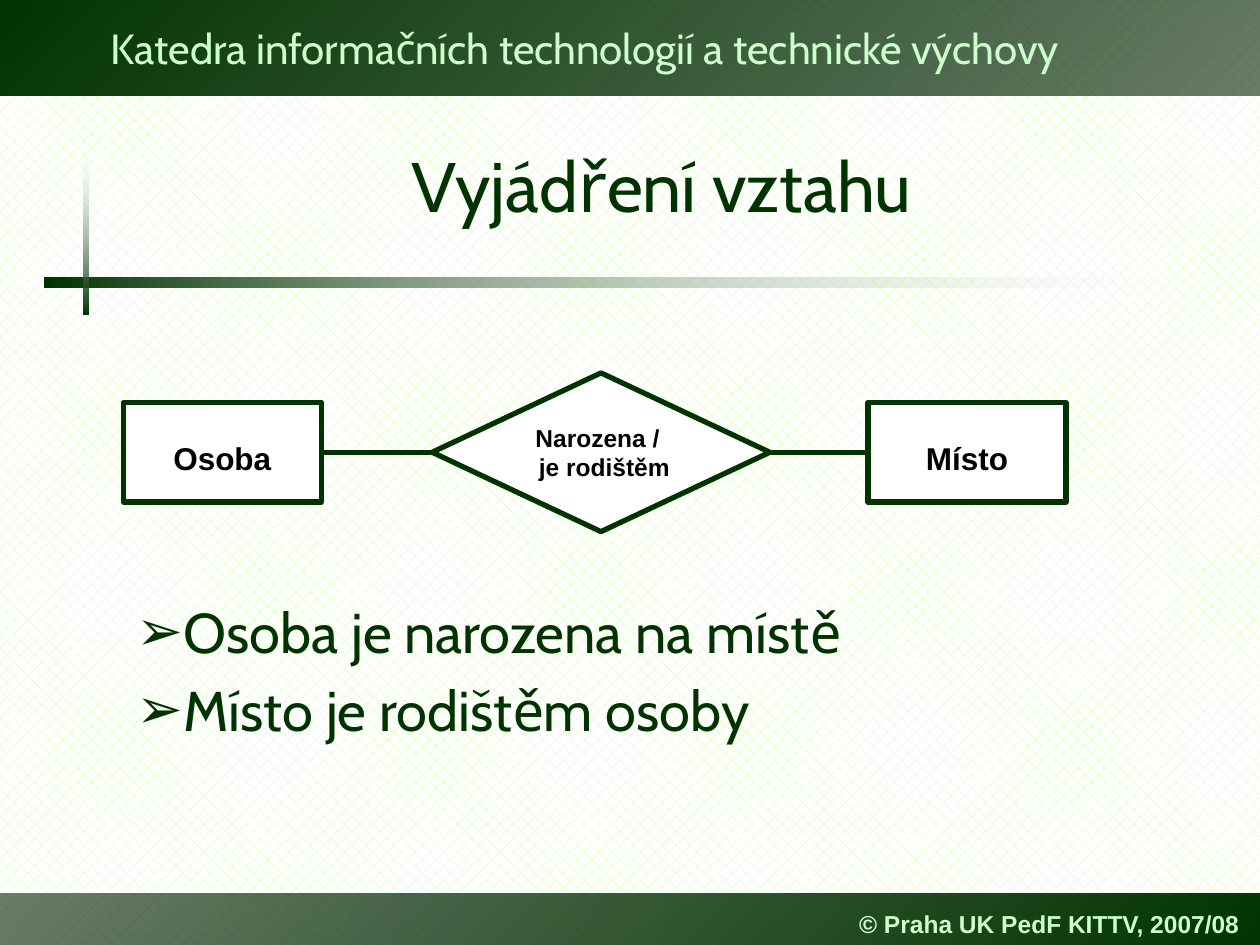
"""Build the slide on expressing a relationship between two entities."""
import pptx
import pptx.util
import pptx.dml.color
import pptx.enum.dml
import pptx.enum.shapes
import pptx.enum.text
import pptx.oxml
import pptx.oxml.ns
from lxml import etree

Inches, Pt = pptx.util.Inches, pptx.util.Pt
SHAPE = pptx.enum.shapes.MSO_SHAPE
ALIGN = pptx.enum.text.PP_ALIGN
ANCHOR = pptx.enum.text.MSO_ANCHOR
qn = pptx.oxml.ns.qn

COLORS = {"dark": "003300", "deep": "002400", "mint": "CCFFCC",
          "lime": "CCFF99", "white": "FFFFFF", "black": "000000"}
FONTS = {
    "header": {"name": "Cabin", "size": Pt(24), "color": "mint"},
    "footer": {"name": "Arial", "size": Pt(14), "bold": True, "color": "mint"},
    "title": {"name": "Cabin", "size": Pt(40), "color": "dark"},
    "body": {"name": "Cabin", "size": Pt(32), "color": "dark"},
    "entity": {"name": "Arial", "size": Pt(18), "bold": True, "color": "black"},
    "relation": {"name": "Arial", "size": Pt(14), "bold": True, "color": "black"},
}
BAND = [("deep", 59), ("dark", 100)]
FADE = [("dark", 100), ("white", 0)]
BARS = [
    ((0, 7.09, 10, 0.44), 0, BAND, 45),
    ((0, 0, 10, 0.76), 180, BAND, 45),
    ((0.35, 2.2, 9.49, 0.08), 0, FADE, 0),
    ((-0.03, 1.76, 1.43, 0.04), 270, FADE, 0),
]
LABELS = [
    ("Katedra informačních technologií a technické výchovy",
     (0.78, 0.13, 8.07, 0.5), "header", ANCHOR.TOP),
    ("© Praha UK PedF KITTV, 2007/08",
     (6.72, 7.17, 3.28, 0.33), "footer", ANCHOR.MIDDLE),
]
TITLE = "Vyjádření vztahu"
NODES = [
    ("Osoba", SHAPE.RECTANGLE, 0.98, 1.57, 0.79, "entity", 0.14),
    ("Narozena / \v je rodištěm", SHAPE.DIAMOND, 3.43, 2.68, 1.26, "relation", 0.05),
    ("Místo", SHAPE.RECTANGLE, 6.89, 1.57, 0.79, "entity", 0.14),
]
AXIS = 3.59
LEFT_SITE, RIGHT_SITE = 1, 3
BULLETS = ["Osoba je narozena na místě", "Místo je rodištěm osoby"]
INDENT = Inches(0.38)


def rgb(key):
    return pptx.dml.color.RGBColor.from_string(COLORS[key])


def style(font, key):
    for name, value in FONTS[key].items():
        if name == "color":
            font.color.rgb = rgb(value)
        else:
            setattr(font, name, value)


def place(shape, box):
    for name, value in zip(("left", "top", "width", "height"), box):
        setattr(shape, name, Inches(value))


def add_bar(s, box, rotation, stops, angle):
    bar = s.shapes.add_shape(SHAPE.RECTANGLE, *map(Inches, box))
    bar.rotation = rotation
    bar.shadow.inherit = False
    bar.line.fill.background()
    bar.fill.gradient()
    bar.fill.gradient_angle = -angle % 360
    for stop, (color, _) in zip(bar.fill.gradient_stops, stops):
        stop.color.rgb = rgb(color)
    for clr, (_, alpha) in zip(bar._element.spPr.iter(qn("a:srgbClr")), stops):
        etree.SubElement(clr, qn("a:alpha"), val=str(alpha * 1000))


def add_label(s, text, box, key, anchor):
    tf = s.shapes.add_textbox(*map(Inches, box)).text_frame
    tf.word_wrap = False
    tf.vertical_anchor = anchor
    r = tf.paragraphs[0].add_run()
    r.text = text
    style(r.font, key)
    return r


def add_text_shadow(r):
    effects = pptx.oxml.parse_xml(
        f'<a:effectLst {pptx.oxml.ns.nsdecls("a")}>'
        '<a:outerShdw dist="35921" dir="2700000">'
        '<a:srgbClr val="000000"/></a:outerShdw></a:effectLst>')
    r._r.rPr.find(qn("a:solidFill")).addnext(effects)


def add_node(s, text, kind, left, width, height, key, margin_top):
    box = (left, AXIS - height / 2, width, height)
    node = s.shapes.add_shape(kind, *map(Inches, box))
    node.shadow.inherit = False
    node.fill.solid()
    node.fill.fore_color.rgb = rgb("white")
    node.line.color.rgb = rgb("dark")
    node.line.width = Pt(3)
    tf = node.text_frame
    tf.margin_top = Inches(margin_top)
    tf.vertical_anchor = ANCHOR.MIDDLE
    p = tf.paragraphs[0]
    p.text = text
    p.alignment = ALIGN.CENTER
    for r in p.runs:
        style(r.font, key)
    return node


def add_link(s, start, end):
    link = s.shapes.add_connector(pptx.enum.shapes.MSO_CONNECTOR.STRAIGHT, 0, 0, 0, 0)
    link.begin_connect(start, RIGHT_SITE)
    link.end_connect(end, LEFT_SITE)
    link.line.color.rgb = rgb("dark")
    link.line.width = Pt(3)
    etree.SubElement(link._element.spPr, qn("a:effectLst"))


def fill_title(title):
    place(title, (0.75, 0.84, 9, 1.25))
    tf = title.text_frame
    tf.vertical_anchor = ANCHOR.MIDDLE
    p = tf.paragraphs[0]
    p.alignment = ALIGN.CENTER
    r = p.add_run()
    r.text = TITLE
    style(r.font, "title")


def fill_body(body):
    place(body, (0.98, 4.69, 6.54, 1.89))
    tf = body.text_frame
    tf.auto_size = pptx.enum.text.MSO_AUTO_SIZE.NONE
    for i, text in enumerate(BULLETS):
        p = tf.add_paragraph() if i else tf.paragraphs[0]
        p.space_before = Pt(6.4 if i else 0)
        pPr = p._p.get_or_add_pPr()
        pPr.set("marL", str(INDENT))
        pPr.set("indent", str(-INDENT))
        color = etree.SubElement(pPr, qn("a:buClr"))
        etree.SubElement(color, qn("a:srgbClr"), val=COLORS["dark"])
        etree.SubElement(pPr, qn("a:buChar"), char="➢")
        r = p.add_run()
        r.text = text
        style(r.font, "body")


def main():
    prs = pptx.Presentation()
    prs.slide_width, prs.slide_height = Inches(10), Inches(7.5)
    s = prs.slides.add_slide(prs.slide_layouts[1])
    fill = s.background.fill
    fill.patterned()
    fill.pattern = pptx.enum.dml.MSO_PATTERN.PERCENT_25
    fill.fore_color.rgb, fill.back_color.rgb = rgb("lime"), rgb("white")

    for bar in BARS:
        add_bar(s, *bar)
    header, _ = [add_label(s, *label) for label in LABELS]
    add_text_shadow(header)
    fill_title(s.shapes.title)
    nodes = [add_node(s, *node) for node in NODES]
    for start, end in zip(nodes, nodes[1:]):
        add_link(s, start, end)
    fill_body(s.placeholders[1])
    prs.save("out.pptx")


if __name__ == "__main__":
    main()
